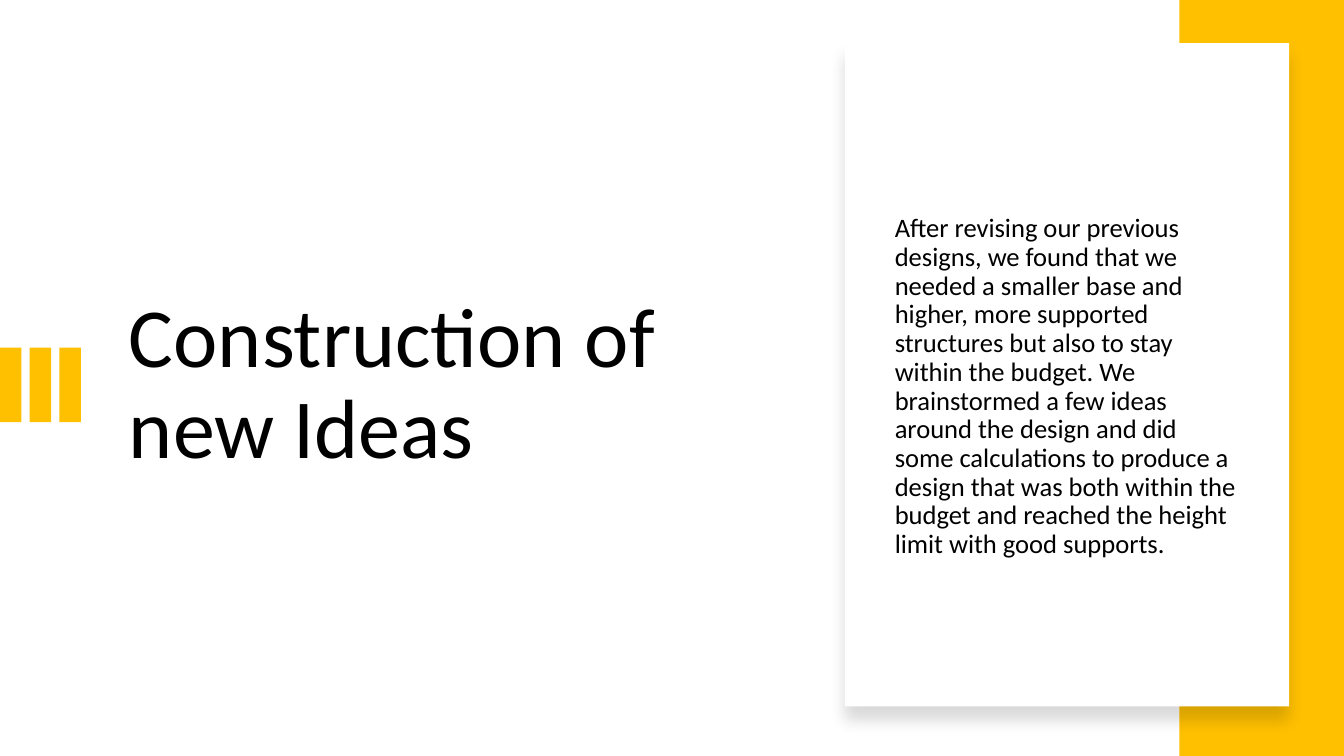
from lxml import etree
from pptx import Presentation
from pptx import util as u
from pptx.dml.color import RGBColor
from pptx.enum import shapes, text
from pptx.oxml import ns

AMBER = RGBColor(0xFF, 0xC0, 0x00)
WHITE = RGBColor(0xFF, 0xFF, 0xFF)
BLACK = RGBColor(0x00, 0x00, 0x00)

SLIDE_WIDTH, SLIDE_HEIGHT = 33.87, 19.05
BAND_WIDTH = 4.15
BAR_COUNT, BAR_PITCH = 3, 0.75
BAR_TOP, BAR_WIDTH, BAR_HEIGHT = 8.76, 0.54, 1.88
CARD = (21.29, 1.09, 11.2, 16.71)
SHADOW = {"blurRad": u.Pt(11), "dist": u.Pt(10), "dir": 90 * 60000,
          "algn": "t", "rotWithShape": 0}
SHADOW_OPACITY = 15

TEXTS = [
    ((3, 3.18, 16.76, 13.08), 60, "Construction of new Ideas"),
    ((22.3, 4.7, 9.17, 10.11), 19,
     "After revising our previous designs, we found that we needed a smaller "
     "base and higher, more supported structures but also to stay within the "
     "budget. We brainstormed a few ideas around the design and did some "
     "calculations to produce a design that was both within the budget and "
     "reached the height limit with good supports."),
]


def set_all(target, values):
    for name, value in values.items():
        setattr(target, name, value)


def add_rectangle(page, place, color):
    box = page.shapes.add_shape(shapes.MSO_SHAPE.RECTANGLE, *map(u.Cm, place))
    box.shadow.inherit = False
    box.fill.solid()
    box.fill.fore_color.rgb = color
    box.line.fill.background()
    return box


def add_soft_shadow(box):
    effects = box.element.spPr.find(ns.qn("a:effectLst"))
    shadow = etree.SubElement(effects, ns.qn("a:outerShdw"),
                              {name: str(value) for name, value in SHADOW.items()})
    color = etree.SubElement(shadow, ns.qn("a:srgbClr"), val=str(BLACK))
    etree.SubElement(color, ns.qn("a:alpha"), val=str(SHADOW_OPACITY * 1000))


def add_text(page, place, size, words):
    box = page.shapes.add_textbox(*map(u.Cm, place))
    set_all(box.text_frame, {"word_wrap": True,
                             "vertical_anchor": text.MSO_ANCHOR.MIDDLE})
    para = box.text_frame.paragraphs[0]
    para.line_spacing = 0.9
    span = para.add_run()
    span.text = words
    set_all(span.font, {"name": "Calibri", "size": u.Pt(size)})
    span.font.color.rgb = BLACK


def main():
    deck = Presentation()
    set_all(deck, {"slide_width": u.Cm(SLIDE_WIDTH),
                   "slide_height": u.Cm(SLIDE_HEIGHT)})
    page = deck.slides.add_slide(deck.slide_layouts[6])

    for index in range(BAR_COUNT):
        add_rectangle(page, (index * BAR_PITCH, BAR_TOP, BAR_WIDTH, BAR_HEIGHT), AMBER)
    add_rectangle(page, (SLIDE_WIDTH - BAND_WIDTH, 0, BAND_WIDTH, SLIDE_HEIGHT), AMBER)
    add_soft_shadow(add_rectangle(page, CARD, WHITE))

    for place, size, words in TEXTS:
        add_text(page, place, size, words)

    deck.save("out.pptx")


if __name__ == "__main__":
    main()
